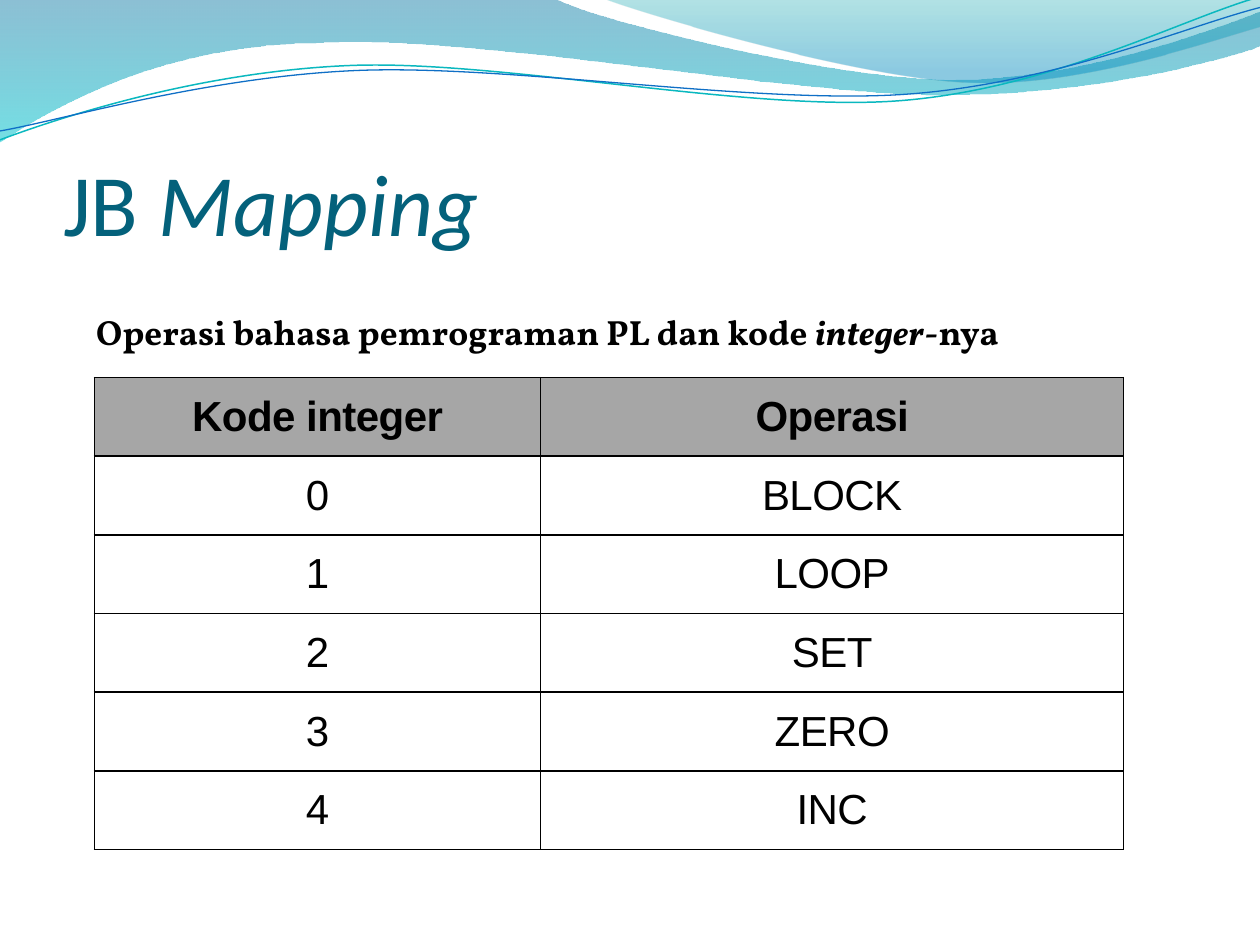
from dataclasses import dataclass
from math import cos, radians, sin
from typing import Optional

from lxml.etree import SubElement
from pptx import Presentation
from pptx.dml.color import RGBColor
from pptx.enum.text import MSO_ANCHOR, MSO_AUTO_SIZE, PP_ALIGN
from pptx.oxml.ns import qn
from pptx.util import Cm, Pt

COLORS = {
    "title": "04617B", "text": "000000", "header": "A6A6A6", "border": "000000",
    "blue": "0074A1", "aqua": "00C6CF", "teal": "00A1A9", "sky": "008BBF",
    "teal_line": "0AB8BF", "blue_line": "0F6FC6",
}
ROWS = [("Kode integer", "Operasi"), ("0", "BLOCK"), ("1", "LOOP"),
        ("2", "SET"), ("3", "ZERO"), ("4", "INC")]
COLUMN_WIDTHS = (Cm(9), Cm(11.75))
TABLE_HEIGHT = Cm(9.52)
LINE_TILT = -2.7


@dataclass
class Stop:
    position: float
    color: str
    alpha: int


@dataclass
class Wave:
    """A start point, then segments in inches: 2 numbers a line, 6 a Bézier curve."""
    start: tuple
    segments: list
    stops: tuple = ()
    line: Optional[str] = None
    width: float = 0
    tilt: float = 0
    center: tuple = (0, 0)


WAVES = [
    Wave((0, -0.01), [
        (4.4, -0.01), (4.76, 0.17, 6.64, 0.63, 7.58, 0.63),
        (8.53, 0.63, 9.58, 0.26, 10, 0.09), (10.01, 0.36),
        (9.83, 0.44, 8.7, 0.76, 7.46, 0.75), (6.22, 0.75, 3.82, 0.28, 2.57, 0.34),
        (1.29, 0.35, 0.46, 0.83, -0.01, 1.13), (0, -0.01),
    ], stops=(Stop(0, "blue", 45), Stop(1, "aqua", 55))),
    Wave((4.79, -0.01), [
        (5.09, 0.11, 6.82, 0.62, 7.69, 0.65), (8.56, 0.69, 9.61, 0.32, 10, 0.21),
        (10, 0), (4.79, -0.01),
    ], stops=(Stop(0, "teal", 30), Stop(0.8, "sky", 45))),
    Wave((0, 1.11), [
        (0.48, 0.93, 1.58, 0.57, 2.77, 0.52), (3.95, 0.47, 5.93, 0.89, 7.13, 0.8),
        (8.33, 0.71, 9.38, 0.15, 9.98, -0.02),
    ], line="teal_line", width=0.85, tilt=LINE_TILT, center=(4.99, 0.58)),
    Wave((0, 1.04), [
        (0.47, 0.96, 1.64, 0.61, 2.83, 0.56), (4.03, 0.51, 5.97, 0.83, 7.17, 0.75),
        (8.36, 0.67, 9.41, 0.21, 10, 0.06),
    ], line="blue_line", width=0.75, tilt=LINE_TILT, center=(5, 0.59)),
]


def rgb(name: str) -> RGBColor:
    return RGBColor.from_string(COLORS[name])


def level_points(wave: Wave) -> list:
    """List start, control and end points with the tilt taken out."""
    angle = radians(-wave.tilt)
    cx, cy = wave.center
    numbers = [n for seg in (wave.start, *wave.segments) for n in seg]
    points = []
    for x, y in zip(numbers[::2], numbers[1::2]):
        dx, dy = x - cx, y - cy
        points.append((Cm(2.54 * (cx + dx * cos(angle) - dy * sin(angle))),
                       Cm(2.54 * (cy + dx * sin(angle) + dy * cos(angle)))))
    return points


def bend_segments(sp, segments: list) -> None:
    """Join each run of three line points into one Bézier curve."""
    lines = iter(list(sp.element.iter(qn("a:lnTo"))))
    for seg in segments:
        first = next(lines)
        if len(seg) == 6:
            first.tag = qn("a:cubicBezTo")
            for _ in range(2):
                extra = next(lines)
                first.append(extra[0])
                extra.getparent().remove(extra)


def draw_wave(s, wave: Wave) -> None:
    start, *rest = level_points(wave)
    builder = s.shapes.build_freeform(*start)
    builder.add_line_segments(rest, close=bool(wave.stops))
    sp = builder.convert_to_shape()
    bend_segments(sp, wave.segments)
    sp.rotation = wave.tilt
    sp.shadow.inherit = False
    if wave.line:
        sp.fill.background()
        sp.line.color.rgb = rgb(wave.line)
        sp.line.width = Pt(wave.width)
        return
    sp.line.fill.background()
    sp.fill.gradient()
    sp.fill.gradient_angle = 270
    for target, stop in zip(sp.fill.gradient_stops, wave.stops):
        target.position = stop.position
        target.color.rgb = rgb(stop.color)
    for clr, stop in zip(sp.element.iter(qn("a:srgbClr")), wave.stops):
        SubElement(clr, qn("a:alpha"), val=str(stop.alpha * 1000))


def format_run(r, font: str, size: float, color: str, bold=False, italic=False) -> None:
    r.font.name, r.font.size = font, Pt(size)
    r.font.bold, r.font.italic = bold, italic
    r.font.color.rgb = rgb(color)


def add_runs(p, parts: list, font: str, size: float, color: str, bold=False) -> None:
    """Add (text, italic) parts that share one format."""
    for text, italic in parts:
        r = p.add_run()
        r.text = text
        format_run(r, font, size, color, bold, italic)


def draw_title(s) -> None:
    sp = s.shapes.title
    sp.element.getparent().append(sp.element)  # in front of the waves
    sp.left, sp.top, sp.width, sp.height = Cm(1.27), Cm(1.95), Cm(23.06), Cm(3.17)
    tf = sp.text_frame
    tf.auto_size = MSO_AUTO_SIZE.NONE
    tf.vertical_anchor = MSO_ANCHOR.BOTTOM
    tf.margin_left = tf.margin_right = tf.margin_bottom = 0
    p = tf.paragraphs[0]
    p.alignment = PP_ALIGN.LEFT
    add_runs(p, [("JB ", False), ("Mapping", True)], "Calibri", 50, "title")


def draw_caption(s) -> None:
    sp = s.shapes.add_textbox(Cm(1.69), Cm(6.13), Cm(20.75), Cm(1.12))
    sp.text_frame.word_wrap = True
    sp.text_frame.auto_size = MSO_AUTO_SIZE.SHAPE_TO_FIT_TEXT
    parts = [("Operasi bahasa pemrograman PL dan kode ", False),
             ("integer", True), ("-nya", False)]
    add_runs(sp.text_frame.paragraphs[0], parts, "Vollkorn", 20, "text", bold=True)


def set_borders(cell) -> None:
    tc_pr = cell._tc.get_or_add_tcPr()
    for side in ("lnL", "lnR", "lnT", "lnB"):
        ln = SubElement(tc_pr, qn(f"a:{side}"), w=str(Pt(1)))
        fill = SubElement(ln, qn("a:solidFill"))
        SubElement(fill, qn("a:srgbClr"), val=COLORS["border"])


def format_cell(cell, text: str, header: bool) -> None:
    set_borders(cell)
    if header:
        cell.fill.solid()
        cell.fill.fore_color.rgb = rgb("header")
    else:
        cell.fill.background()
    cell.vertical_anchor = MSO_ANCHOR.MIDDLE
    cell.margin_left = cell.margin_right = Cm(0.18)
    cell.margin_top = cell.margin_bottom = 0
    cell.text_frame.text = text
    p = cell.text_frame.paragraphs[0]
    p.alignment = PP_ALIGN.CENTER
    p.space_before, p.space_after = Pt(3), Pt(6)
    r = p.runs[0]
    format_run(r, "Arial", 24, "text", bold=header)
    r.font._element.set("spc", "-30")


def draw_table(s) -> None:
    frame = s.shapes.add_table(len(ROWS), len(COLUMN_WIDTHS), Cm(1.9), Cm(7.61),
                               sum(COLUMN_WIDTHS), TABLE_HEIGHT)
    table = frame.table
    table.first_row = table.horz_banding = False
    for column, width in zip(table.columns, COLUMN_WIDTHS):
        column.width = width
    for i, texts in enumerate(ROWS):
        for j, text in enumerate(texts):
            format_cell(table.cell(i, j), text, header=i == 0)


def main() -> None:
    prs = Presentation()
    prs.slide_width, prs.slide_height = Cm(25.4), Cm(19.05)
    s = prs.slides.add_slide(prs.slide_layouts[5])
    for wave in WAVES:
        draw_wave(s, wave)
    draw_title(s)
    draw_table(s)
    draw_caption(s)
    prs.save("out.pptx")


if __name__ == "__main__":
    main()
